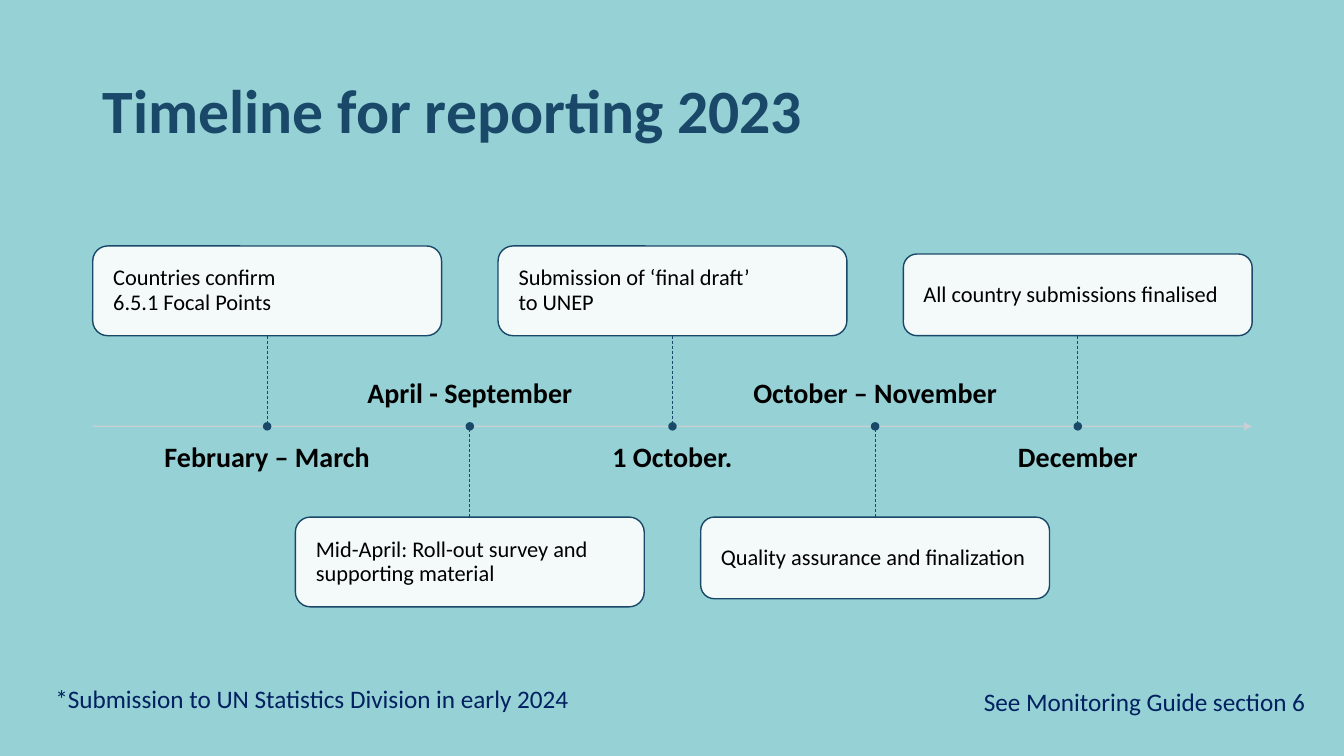
from lxml import etree
from pptx import Presentation
from pptx.dml.color import RGBColor
from pptx.enum.dml import MSO_LINE
from pptx.enum.shapes import MSO_CONNECTOR, MSO_SHAPE
from pptx.enum.text import MSO_ANCHOR as ANCHOR, PP_ALIGN as ALIGN
from pptx.oxml.ns import qn
from pptx.util import Pt

PX = 9144  # 100 px to the inch
BACKGROUND = RGBColor(0x95, 0xD1, 0xD5)
NAVY = RGBColor(0x19, 0x48, 0x69)
FOOTER_BLUE = RGBColor(0x00, 0x20, 0x60)
AXIS_GREY = RGBColor(0xCC, 0xCF, 0xD4)
WHITE = RGBColor(0xFF, 0xFF, 0xFF)
BLACK = RGBColor(0x00, 0x00, 0x00)

CARD_WIDTH, LABEL_WIDTH, LABEL_HEIGHT, DOT = 346, 304, 54, 7
LABEL_GAP, STEM = 17, 90

# period, event, card height, whether the card is above the axis
MILESTONES = [
    ("February – March", "Countries confirm\v6.5.1 Focal Points", 89, True),
    ("April - September", "Mid-April: Roll-out survey and supporting material", 89, False),
    ("1 October.", "Submission of ‘final draft’\vto UNEP", 89, True),
    ("October – November", "Quality assurance and finalization", 81, False),
    ("December", "All country submissions finalised", 81, True),
]


def px(*lengths):
    return [round(length * PX) for length in lengths]


def set_opacity(color_format_owner, percent):
    color = color_format_owner.find(".//" + qn("a:srgbClr"))
    etree.SubElement(color, qn("a:alpha"), val=str(percent * 1000))


def write(shape, text, size, color=BLACK, bold=False, align=ALIGN.LEFT,
          anchor=ANCHOR.TOP, margins=(10, 5), spacing=0.9, wrap=True):
    frame = shape.text_frame
    frame.word_wrap = wrap
    frame.vertical_anchor = anchor
    frame.margin_left = frame.margin_right = px(margins[0])[0]
    frame.margin_top = frame.margin_bottom = px(margins[1])[0]
    frame.text = text
    paragraph = frame.paragraphs[0]
    paragraph.alignment = align
    paragraph.line_spacing = spacing
    for run in paragraph.runs:
        run.font.name = "Calibri"
        run.font.size = Pt(size)
        run.font.bold = bold
        run.font.color.rgb = color


def add_text(slide, box, text, size, **style):
    write(slide.shapes.add_textbox(*px(*box)), text, size, **style)


def add_outlined(slide, preset, box, fill):
    shape = slide.shapes.add_shape(preset, *px(*box))
    shape.shadow.inherit = False
    shape.fill.solid()
    shape.fill.fore_color.rgb = fill
    shape.line.color.rgb = NAVY
    shape.line.width = Pt(1)
    return shape


def add_line(slide, start, end, color, width):
    line = slide.shapes.add_connector(MSO_CONNECTOR.STRAIGHT, *px(*start, *end))
    line.line.color.rgb = color
    line.line.width = Pt(width)
    etree.SubElement(line._element.spPr, qn("a:effectLst"))
    return line


def add_axis(slide, left, right, y):
    axis = add_line(slide, (left, y), (right, y), AXIS_GREY, 1)
    outline = axis.line._get_or_add_ln()
    set_opacity(outline, 90)
    etree.SubElement(outline, qn("a:tailEnd"), type="triangle")


def add_milestone(slide, x, y, period, event, height, above):
    """Place one milestone around the point (x, y) of the axis."""
    label_top = y + LABEL_GAP if above else y - LABEL_GAP - LABEL_HEIGHT
    add_text(slide, (x - LABEL_WIDTH / 2, label_top, LABEL_WIDTH, LABEL_HEIGHT),
             period, 20, bold=True, align=ALIGN.CENTER, margins=(0, 0),
             anchor=ANCHOR.TOP if above else ANCHOR.BOTTOM)

    card_top = y - STEM - height if above else y + STEM
    card = add_outlined(slide, MSO_SHAPE.ROUNDED_RECTANGLE,
                        (x - CARD_WIDTH / 2, card_top, CARD_WIDTH, height), WHITE)
    set_opacity(card._element.spPr.find(qn("a:solidFill")), 90)
    write(card, event, 16, anchor=ANCHOR.MIDDLE, margins=(16, 16))

    stem = add_line(slide, (x, y - STEM if above else y + STEM), (x, y), NAVY, 0.5)
    stem.line.dash_style = MSO_LINE.DASH
    stem.begin_connect(card, 2 if above else 0)

    add_outlined(slide, MSO_SHAPE.OVAL, (x - DOT / 2, y - DOT / 2, DOT, DOT), NAVY)


def add_timeline(slide, left, width, y):
    add_axis(slide, left, left + width, y)
    first = left + CARD_WIDTH / 2
    step = (width - CARD_WIDTH) / (len(MILESTONES) - 1)
    for index, milestone in enumerate(MILESTONES):
        add_milestone(slide, first + index * step, y, *milestone)


def add_footer(slide, left, top):
    style = dict(color=FOOTER_BLUE, spacing=1.0)
    add_text(slide, (left, top, 790, 40),
             "*Submission to UN Statistics Division in early 2024", 18, **style)
    add_text(slide, (left + 921, top + 3, 343, 40),
             "See Monitoring Guide section 6", 18, wrap=False, **style)


def main():
    deck = Presentation()
    deck.slide_width, deck.slide_height = px(1333, 750)
    slide = deck.slides.add_slide(deck.slide_layouts[6])
    slide.background.fill.solid()
    slide.background.fill.fore_color.rgb = BACKGROUND
    add_text(slide, (92, 40, 1150, 145), "Timeline for reporting 2023", 44,
             color=NAVY, bold=True, anchor=ANCHOR.MIDDLE)
    add_timeline(slide, left=92, width=1150, y=423)
    add_footer(slide, left=45, top=673)
    deck.save("out.pptx")


if __name__ == "__main__":
    main()
